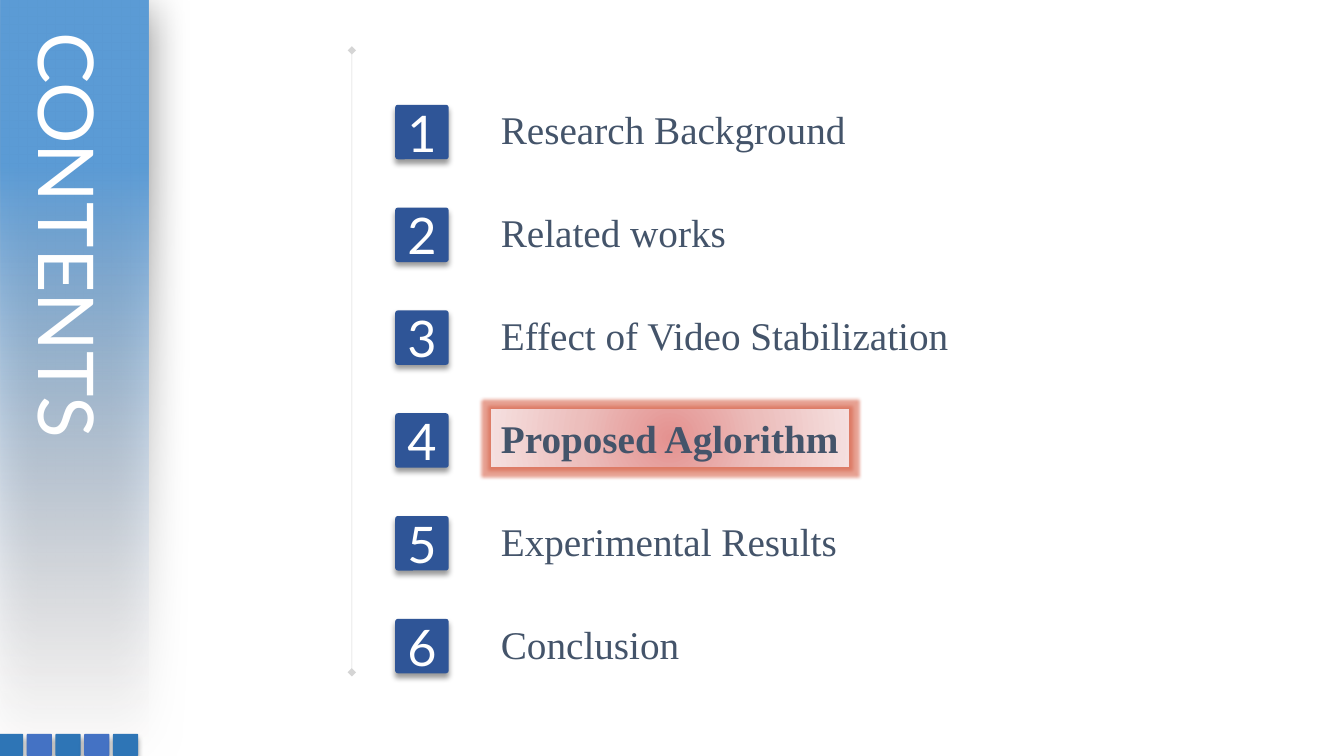
from dataclasses import dataclass

from lxml import etree
from pptx import Presentation
from pptx.dml.color import RGBColor
from pptx.enum.shapes import MSO_CONNECTOR, MSO_SHAPE
from pptx.enum.text import MSO_ANCHOR, MSO_AUTO_SIZE, PP_ALIGN
from pptx.oxml.ns import qn
from pptx.util import Inches, Pt

RECT, ROUNDED = MSO_SHAPE.RECTANGLE, MSO_SHAPE.ROUNDED_RECTANGLE
STRAIGHT = MSO_CONNECTOR.STRAIGHT
TOP, MIDDLE = MSO_ANCHOR.TOP, MSO_ANCHOR.MIDDLE
LEFT, CENTER = PP_ALIGN.LEFT, PP_ALIGN.CENTER
GROW, FIXED = MSO_AUTO_SIZE.SHAPE_TO_FIT_TEXT, MSO_AUTO_SIZE.NONE


@dataclass(frozen=True)
class Theme:
    sans: str = "Lato"
    serif: str = "Times New Roman"
    title_size: int = 55
    number_size: int = 36
    topic_size: int = 28
    white: str = "FFFFFF"
    topic: str = "44546A"
    number_fill: str = "2F5597"
    tiles: tuple = ("2E75B6", "4472C4")
    rule: str = "808080"
    shadow: str = "000000"
    glow: str = "D8634A"
    # Gradient stops: position in percent, colour, opacity in percent
    banner: tuple = ((0, "FEF2F0", 0), (78, "5B9BD5", 100), (100, "5B9BD5", 100))
    highlight: tuple = ((0, "E49290", 100), (50, "ECBEBC", 100), (100, "F5DFDF", 100))


THEME = Theme()
# Each topic with the width of its label in inches
TOPICS = [("Research Background", 3.96), ("Related works", 2.44),
          ("Effect of Video Stabilization", 4.8), ("Proposed Aglorithm", 3.55),
          ("Experimental Results", 3.77), ("Conclusion", 2.06)]
CURRENT_TOPIC = 3


def add_node(parent, tag, **attributes):
    return etree.SubElement(parent, qn(tag), {k: str(v) for k, v in attributes.items()})


def add_color(parent, color, opacity):
    node = add_node(parent, "a:srgbClr", val=color)
    if opacity < 100:
        add_node(node, "a:alpha", val=opacity * 1000)


def add_shadow(shape, opacity, blur, distance, angle):
    effects = shape._element.spPr.find(qn("a:effectLst"))
    shadow = add_node(effects, "a:outerShdw", blurRad=Pt(blur), dist=Pt(distance),
                      dir=angle * 60000, algn="t", rotWithShape=0)
    add_color(shadow, THEME.shadow, opacity)


def add_glow(shape, radius, opacity):
    effects = shape._element.spPr.find(qn("a:effectLst"))
    add_color(add_node(effects, "a:glow", rad=Pt(radius)), THEME.glow, opacity)


def fill_gradient(shape, stops, angle=None):
    """Fill along the angle, or outwards from the centre if there is none."""
    gradient = etree.Element(qn("a:gradFill"), rotWithShape="1")
    stop_list = add_node(gradient, "a:gsLst")
    for position, color, opacity in stops:
        add_color(add_node(stop_list, "a:gs", pos=position * 1000), color, opacity)
    if angle is None:
        circle = add_node(gradient, "a:path", path="circle")
        add_node(circle, "a:fillToRect", l=50000, t=50000, r=50000, b=50000)
    else:
        add_node(gradient, "a:lin", ang=angle * 60000, scaled=0)
    shape._element.spPr.find(qn("a:prstGeom")).addnext(gradient)


def add_block(slide, kind, left, top, width, height, color=None):
    block = slide.shapes.add_shape(kind, Inches(left), Inches(top), Inches(width), Inches(height))
    block.shadow.inherit = False
    block.line.fill.background()
    if color:
        block.fill.solid()
        block.fill.fore_color.rgb = RGBColor.from_string(color)
    if kind == ROUNDED:
        block.adjustments[0] = 0.05
    return block


def write(shape, text, *, font, size, color, bold=False, align=LEFT,
          anchor=TOP, wrap=True, fit=GROW):
    frame = shape.text_frame
    frame.word_wrap, frame.auto_size, frame.vertical_anchor = wrap, fit, anchor
    paragraph = frame.paragraphs[0]
    paragraph.alignment = align
    run = paragraph.add_run()
    run.text = text
    run.font.name, run.font.size, run.font.bold = font, Pt(size), bold
    run.font.color.rgb = RGBColor.from_string(color)


def add_rule(slide, x, top, bottom):
    rule = slide.shapes.add_connector(STRAIGHT, Inches(x), Inches(top), Inches(x), Inches(bottom))
    rule.line.width = Pt(0.25)
    rule.line.color.rgb = RGBColor.from_string(THEME.rule)
    line = rule.line._ln
    add_node(line.find(qn("a:solidFill"))[0], "a:alpha", val=33000)
    add_node(line, "a:headEnd", type="diamond")
    add_node(line, "a:tailEnd", type="diamond")
    add_node(rule._element.spPr, "a:effectLst")


def add_sidebar(slide, left, top, width, height):
    # The banner is laid out flat and turned about its centre.
    banner = add_block(slide, RECT, left + (width - height) / 2,
                       top + (height - width) / 2, height, width)
    banner.rotation = 90
    fill_gradient(banner, THEME.banner, angle=180)
    add_shadow(banner, opacity=50, blur=31, distance=6, angle=97)

    tile_pitch = 1.14 / 4
    for i in range(5):
        tile = add_block(slide, ROUNDED, left - 0.02 + i * tile_pitch, top + 7.28,
                         0.25, 0.22, THEME.tiles[i % 2])
        add_shadow(tile, opacity=40, blur=4, distance=3, angle=90)

    title = slide.shapes.add_textbox(Inches(left + 0.07), Inches(top + 0.22),
                                     Inches(1.13), Inches(4.94))
    write(title, "CONTENTS", font=THEME.sans, size=THEME.title_size, color=THEME.white)
    title.text_frame._txBody.bodyPr.set("vert", "eaVert")


def add_topic(slide, left, top, number, topic, width, current):
    badge = add_block(slide, ROUNDED, left, top + 0.04, 0.53, 0.54, THEME.number_fill)
    add_shadow(badge, opacity=40, blur=4, distance=3, angle=90)
    write(badge, str(number), font=THEME.sans, size=THEME.number_size,
          color=THEME.white, align=CENTER, anchor=MIDDLE, fit=FIXED)

    topic_left = left + 0.95
    if current:
        label = add_block(slide, RECT, topic_left, top, width, 0.57)
        fill_gradient(label, THEME.highlight)
        add_glow(label, radius=5, opacity=60)
    else:
        label = slide.shapes.add_textbox(Inches(topic_left), Inches(top),
                                         Inches(width), Inches(0.57))
    write(label, topic, font=THEME.serif, size=THEME.topic_size,
          color=THEME.topic, bold=current, wrap=current)


def add_agenda(slide, left, top, pitch):
    for i, (topic, width) in enumerate(TOPICS):
        add_topic(slide, left, top + i * pitch, i + 1, topic, width, i == CURRENT_TOPIC)


def main():
    deck = Presentation()
    deck.slide_width, deck.slide_height = Inches(13.33), Inches(7.5)
    slide = deck.slides.add_slide(deck.slide_layouts[6])
    add_rule(slide, 3.49, 0.5, 6.67)
    add_sidebar(slide, 0, 0, 1.47, 7.46)
    add_agenda(slide, 3.92, 1, 1.02)
    deck.save("out.pptx")


if __name__ == "__main__":
    main()
